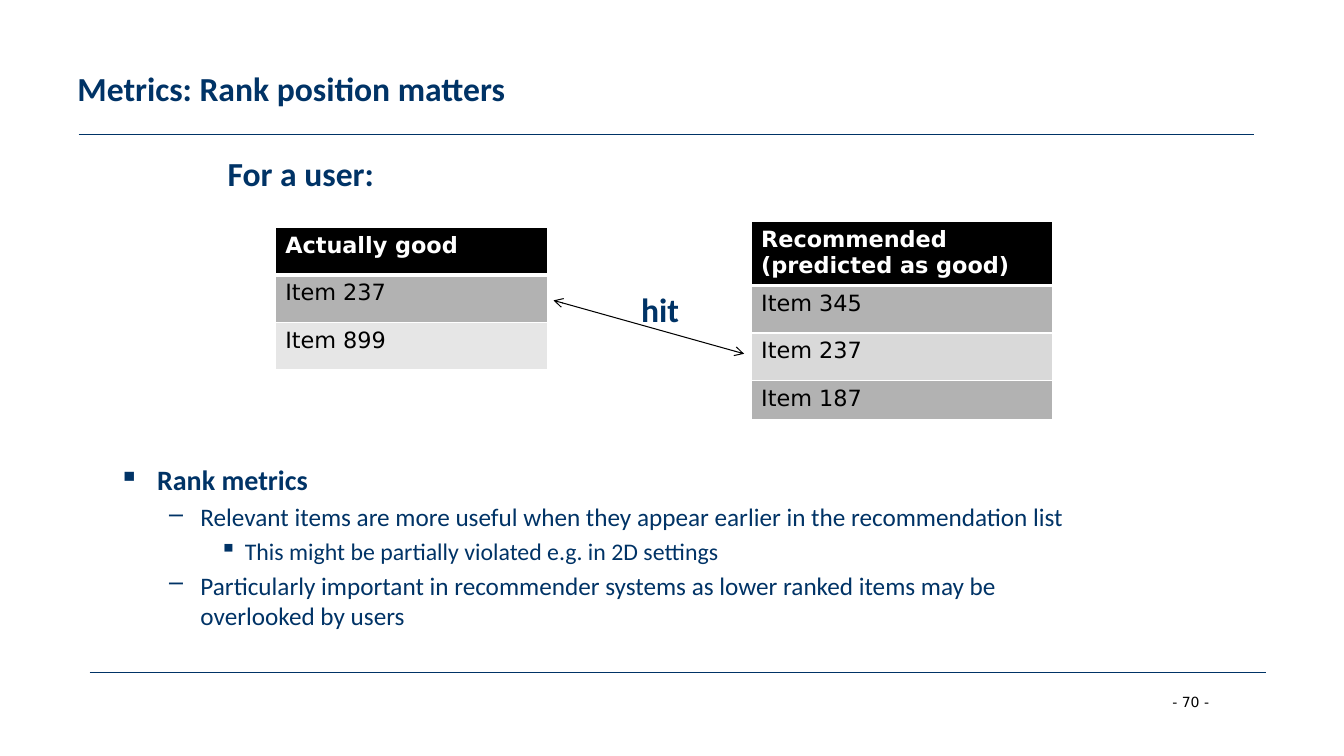
from lxml import etree
from pptx import Presentation
from pptx.dml.color import RGBColor
from pptx.enum.shapes import MSO_CONNECTOR
from pptx.enum.text import MSO_ANCHOR
from pptx.oxml.ns import qn
from pptx.util import Inches, Pt

STRAIGHT = MSO_CONNECTOR.STRAIGHT
MIDDLE = MSO_ANCHOR.MIDDLE
NAVY, BLACK, WHITE, GRAY = "003366", "000000", "FFFFFF", "B2B2B2"
HEADING_FONT, TABLE_FONT = "Calibri", "DejaVu Sans"

# Per outline level: text indent, hanging indent, space before, bullet, size, bold
LEVELS = [
    (0.38, 0.38, 12, "▪", 20, True),
    (0.81, 0.31, 3.6, "–", 18, False),
    (1.25, 0.25, 3.4, "▪", 17, False),
]


def color(value):
    return RGBColor.from_string(value)


def add_span(para, text, size, font=HEADING_FONT, fill=NAVY, bold=False):
    span = para.add_run()
    span.text = text
    span.font.size = Pt(size)
    span.font.name = font
    span.font.bold = bold
    span.font.color.rgb = color(fill)


def add_box(page, left, top, width, height, wrap=True):
    box = page.shapes.add_textbox(*map(Inches, (left, top, width, height)))
    box.text_frame.word_wrap = wrap
    return box.text_frame


def add_label(page, text, left, top, width, height):
    frame = add_box(page, left, top, width, height, wrap=False)
    add_span(frame.paragraphs[0], text, 24, bold=True)


def add_line(page, start, end, fill=NAVY, arrows=False):
    line = page.shapes.add_connector(STRAIGHT, *map(Inches, start + end))
    line.line.color.rgb = color(fill)
    line.line.width = Pt(0.75)
    if arrows:
        outline = line.line._get_or_add_ln()
        for end_tag in ("a:headEnd", "a:tailEnd"):
            etree.SubElement(outline, qn(end_tag), type="arrow")
    etree.SubElement(line._element.spPr, qn("a:effectLst"))


def add_border(cell, side, width):
    properties = cell._tc.get_or_add_tcPr()
    border = etree.SubElement(properties, qn("a:ln" + side), w=str(Pt(width)))
    solid = etree.SubElement(border, qn("a:solidFill"))
    etree.SubElement(solid, qn("a:srgbClr"), val=WHITE)


def add_item_table(page, left, top, width, heights, header, items, fills):
    """Header row over one row per item, with a thick rule under the header."""
    shape = page.shapes.add_table(
        len(heights), 1, *map(Inches, (left, top, width, sum(heights))))
    table = shape.table
    table.columns[0].width = Inches(width)
    rows = [(header, BLACK)] + [([item], fill) for item, fill in zip(items, fills)]
    for index, (lines, fill) in enumerate(rows):
        table.rows[index].height = Inches(heights[index])
        cell = table.cell(index, 0)
        is_header = index == 0
        for side in "LRTB":
            thick = (side == "B" and is_header) or (side == "T" and index == 1)
            add_border(cell, side, 3 if thick else 1)
        cell.fill.solid()
        cell.fill.fore_color.rgb = color(fill)
        frame = cell.text_frame
        for number, text in enumerate(lines):
            para = frame.add_paragraph() if number else frame.paragraphs[0]
            add_span(para, text, 16, TABLE_FONT,
                     WHITE if is_header else BLACK, is_header)


def add_title(page, left, top, width, height):
    frame = add_box(page, left, top, width, height)
    frame.vertical_anchor = MIDDLE
    add_span(frame.paragraphs[0], "Metrics: Rank position matters", 24, bold=True)
    add_line(page, (left + 0.11, top + 1.08), (left + 11.77, top + 1.08))


def add_footer(page, left, top, width):
    add_line(page, (left, top), (left + width, top))
    frame = add_box(page, left + 10.64, top + 0.16, 0.67, 0.27, wrap=False)
    add_span(frame.paragraphs[0], "- 70 -", 10, TABLE_FONT, BLACK)


def add_comparison(page, left, top):
    """Two item lists joined by the arrow that marks the hit."""
    add_label(page, "For a user:", left, top, 1.67, 0.5)
    add_item_table(page, left + 0.57, top + 0.79, 2.7, [0.47] * 3,
                   ["Actually good"], ["Item 237", "Item 899"], [GRAY, "E6E6E6"])
    add_item_table(page, left + 5.29, top + 0.73, 2.99, [0.6, 0.47, 0.47, 0.39],
                   ["Recommended", "(predicted as good)"],
                   ["Item 345", "Item 237", "Item 187"], [GRAY, "D9D9D9", GRAY])
    add_line(page, (left + 3.33, top + 1.51), (left + 5.22, top + 2.04),
             BLACK, arrows=True)
    add_label(page, "hit", left + 4.1, top + 1.35, 0.58, 0.5)


def add_outline(page, left, top, width, height, entries):
    frame = add_box(page, left, top, width, height)
    for number, (level, text) in enumerate(entries):
        indent, hanging, before, bullet, size, bold = LEVELS[level]
        para = frame.add_paragraph() if number else frame.paragraphs[0]
        para.level = level
        para.space_before = Pt(before)
        properties = para._p.get_or_add_pPr()
        properties.set("marL", str(Inches(indent)))
        properties.set("indent", str(-Inches(hanging)))
        etree.SubElement(properties, qn("a:buChar"), char=bullet)
        add_span(para, text, size, bold=bold)


def main():
    deck = Presentation()
    deck.slide_width, deck.slide_height = Inches(13.33), Inches(7.5)
    page = deck.slides.add_slide(deck.slide_layouts[6])

    add_title(page, 0.67, 0.25, 12, 1.25)
    add_comparison(page, 2.16, 1.47)
    add_outline(page, 1.08, 4.54, 10.09, 2.08, [
        (0, "Rank metrics"),
        (1, "Relevant items are more useful when they appear earlier "
            "in the recommendation list"),
        (2, "This might be partially violated e.g. in 2D settings"),
        (1, "Particularly important in recommender systems as lower ranked "
            "items may be overlooked by users"),
    ])
    add_footer(page, 0.89, 6.67, 11.67)
    deck.save("out.pptx")


if __name__ == "__main__":
    main()
